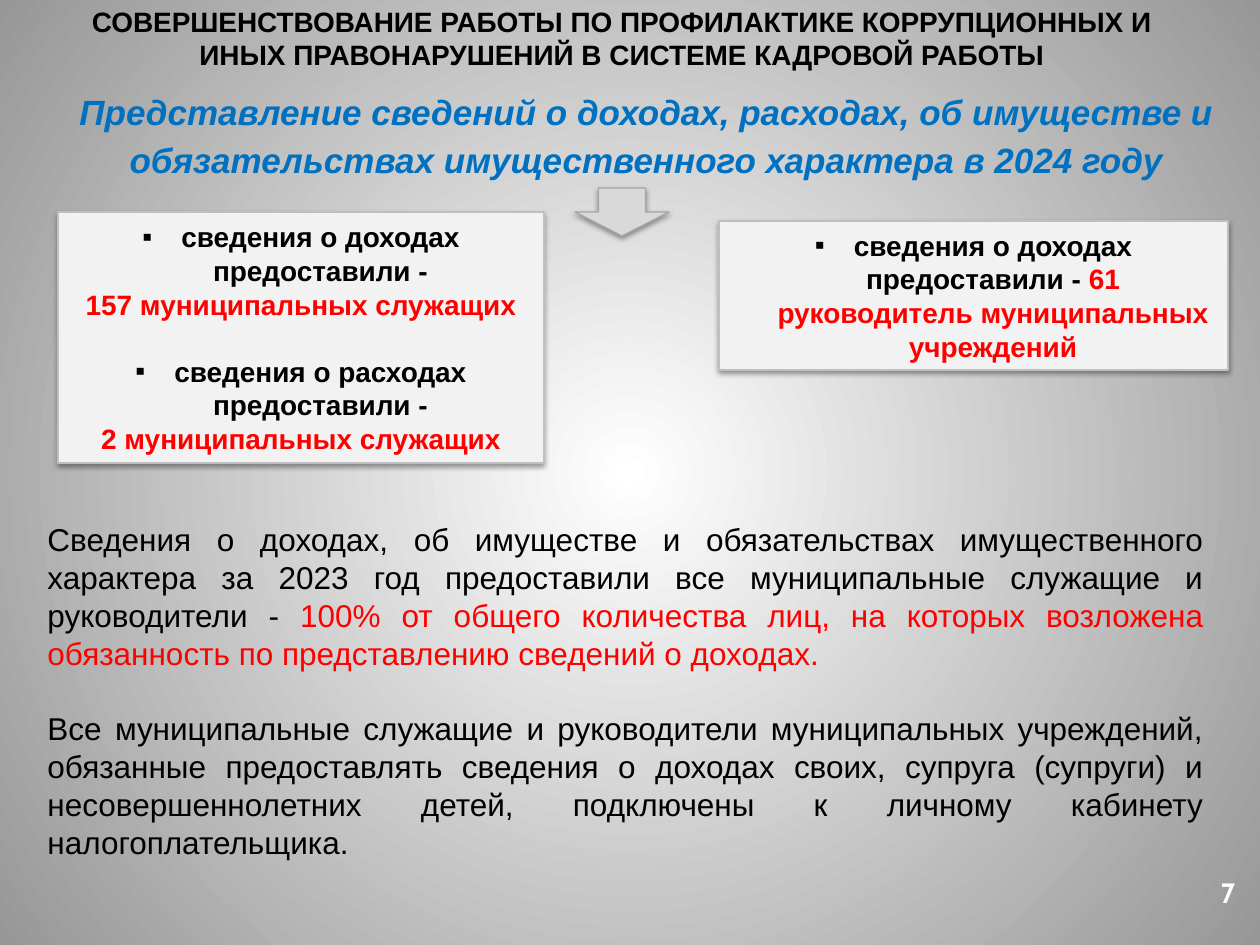
import lxml.etree
import pptx
import pptx.dml.color
import pptx.enum.shapes
import pptx.enum.text
import pptx.oxml.ns
import pptx.util

PX = 914400 / 126
ALIGN = pptx.enum.text.PP_ALIGN
SHAPE = pptx.enum.shapes.MSO_SHAPE
COLORS = {
    "black": "000000", "red": "FF0000", "blue": "0070C0", "white": "FFFFFF",
    "edge": "979797", "panel": "F2F2F2", "panel_line": "BFBFBF",
    "arrow": "D9D9D9", "arrow_line": "A6A6A6",
}


def px(length):
    return pptx.util.Emu(round(length * PX))


def rgb(name):
    return pptx.dml.color.RGBColor.from_string(COLORS[name])


def add_child(parent, tag, **attributes):
    return lxml.etree.SubElement(parent, pptx.oxml.ns.qn(tag), attributes)


def paint_background(page):
    """Radial gradient, white in the middle."""
    fill = page.background.fill
    fill.gradient()
    for stop, name, position in zip(fill.gradient_stops, ("white", "edge"), (0, 1)):
        stop.color.rgb = rgb(name)
        stop.position = position
    gradient = page._element.find(".//" + pptx.oxml.ns.qn("a:gradFill"))
    gradient.remove(gradient.find(pptx.oxml.ns.qn("a:lin")))
    path = add_child(gradient, "a:path", path="circle")
    add_child(path, "a:fillToRect", l="50000", t="50000", r="50000", b="50000")


def add_bullet(para):
    properties = para._p.get_or_add_pPr()
    indent = px(39)
    properties.set("marL", str(indent))
    properties.set("indent", str(-indent))
    add_child(properties, "a:buFont", typeface="Arial")
    add_child(properties, "a:buChar", char="▪")


def write(shape, paragraphs, size, align=ALIGN.CENTER, bold=True, italic=False,
          font="Arial", gap=0, spacing=None):
    """Each paragraph is (bulleted, gap before, [(text, colour), ...])."""
    frame = shape.text_frame
    frame.word_wrap = True
    frame.auto_size = pptx.enum.text.MSO_AUTO_SIZE.SHAPE_TO_FIT_TEXT
    for index, (bulleted, gap, spans) in enumerate(paragraphs):
        para = frame.add_paragraph() if index else frame.paragraphs[0]
        para.alignment = align
        if spacing:
            para.line_spacing = spacing
        if gap:
            para.space_before = pptx.util.Pt(gap)
        if bulleted:
            add_bullet(para)
        for text, color in spans:
            span = para.add_run()
            span.text = text
            span.font.name = font
            span.font.size = pptx.util.Pt(size)
            span.font.bold = bold
            span.font.italic = italic
            span.font.color.rgb = rgb(color)


def add_text(page, box, paragraphs, size, **style):
    write(page.shapes.add_textbox(*map(px, box)), paragraphs, size, **style)


def add_raised_shape(page, kind, box, fill, line):
    shape = page.shapes.add_shape(kind, *map(px, box))
    shape.fill.solid()
    shape.fill.fore_color.rgb = rgb(fill)
    shape.line.color.rgb = rgb(line)
    shape.line.width = pptx.util.Pt(0.75)
    shape.shadow.inherit = False
    effects = shape._element.spPr.find(pptx.oxml.ns.qn("a:effectLst"))
    shadow = add_child(effects, "a:outerShdw", blurRad=str(pptx.util.Pt(3.1)),
                       dist=str(pptx.util.Pt(1.6)), dir="5400000", rotWithShape="0")
    color = add_child(shadow, "a:srgbClr", val=COLORS["black"])
    add_child(color, "a:alpha", val="38000")
    return shape


def add_panel(page, box, paragraphs):
    panel = add_raised_shape(page, SHAPE.RECTANGLE, box, "panel", "panel_line")
    write(panel, paragraphs, 16)


def add_headings(page):
    add_text(page, (53, -2, 1138, 81), [(False, 0, [(
        "СОВЕРШЕНСТВОВАНИЕ РАБОТЫ ПО ПРОФИЛАКТИКЕ КОРРУПЦИОННЫХ И "
        "ИНЫХ ПРАВОНАРУШЕНИЙ В СИСТЕМЕ КАДРОВОЙ РАБОТЫ", "black")])], 16)
    add_text(page, (51, 78, 1191, 111), [(False, 0, [(
        "Представление сведений о доходах, расходах, об имуществе и "
        "обязательствах имущественного характера в 2024 году", "blue")])],
        20, italic=True, spacing=1.15)


def add_summary(page, box):
    add_text(page, box, [
        (False, 0, [
            ("Сведения о доходах, об имуществе и обязательствах имущественного "
             "характера за 2023 год предоставили все муниципальные служащие и "
             "руководители - ", "black"),
            ("100% от общего количества лиц, на которых возложена обязанность "
             "по представлению сведений о доходах.", "red")]),
        (False, 21.6, [
            ("Все муниципальные служащие и руководители муниципальных учреждений, "
             "обязанные предоставлять сведения о доходах своих, супруга (супруги) "
             "и несовершеннолетних детей, подключены к личному кабинету "
             "налогоплательщика.", "black")]),
    ], 18, align=ALIGN.JUSTIFY, bold=False)


def main():
    deck = pptx.Presentation()
    deck.slide_width, deck.slide_height = px(1260), px(945)
    page = deck.slides.add_slide(deck.slide_layouts[6])
    paint_background(page)
    add_text(page, (1196, 869, 64, 47), [(False, 0, [("7", "white")])], 16, font="Cabin")
    add_headings(page)
    add_summary(page, (35, 514, 1181, 357))
    add_panel(page, (58, 212, 486, 251), [
        (True, 0, [("сведения о доходах предоставили -", "black")]),
        (False, 0, [("157 муниципальных служащих", "red")]),
        (True, 19.2, [("сведения о расходах предоставили -", "black")]),
        (False, 0, [("2 муниципальных служащих", "red")]),
    ])
    add_panel(page, (719, 221, 509, 149), [
        (True, 0, [("сведения о доходах предоставили - ", "black"),
                   ("61 руководитель муниципальных учреждений", "red")]),
    ])
    add_raised_shape(page, SHAPE.DOWN_ARROW, (575, 188, 94, 48), "arrow", "arrow_line")
    deck.save("out.pptx")


if __name__ == "__main__":
    main()
